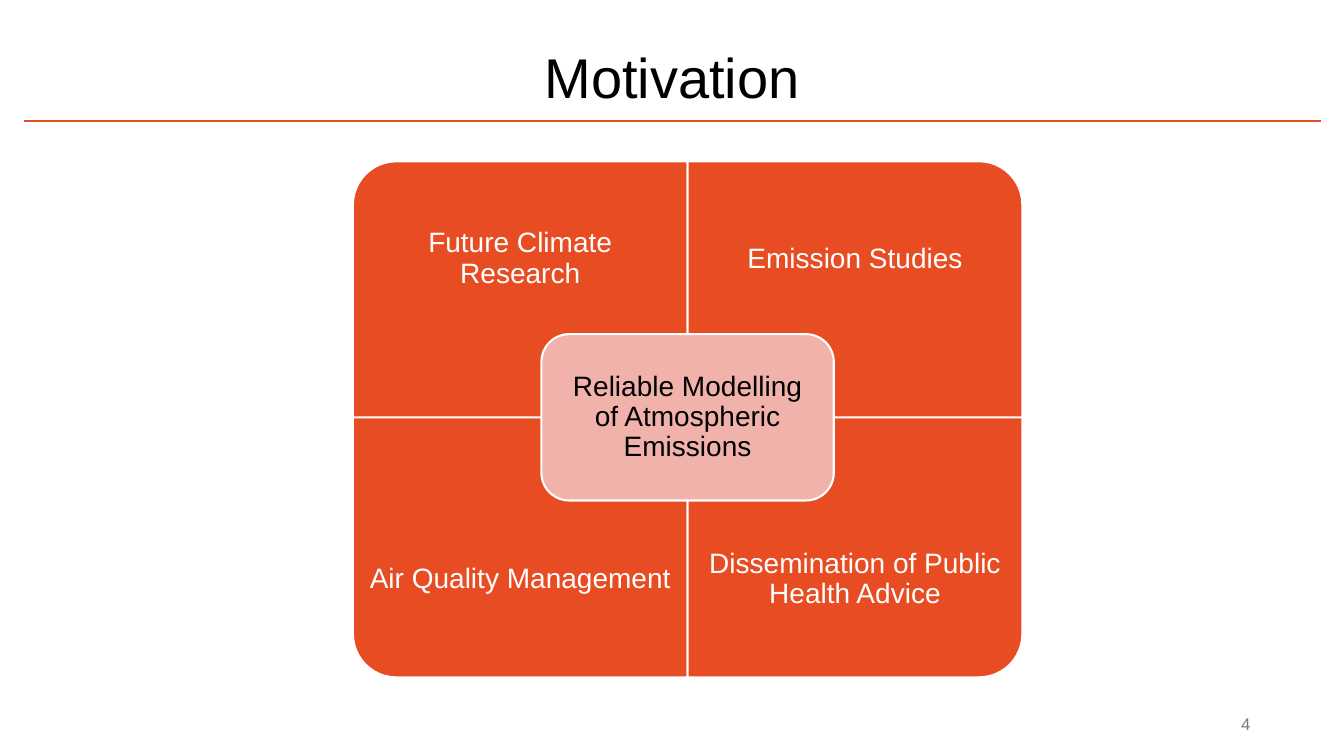
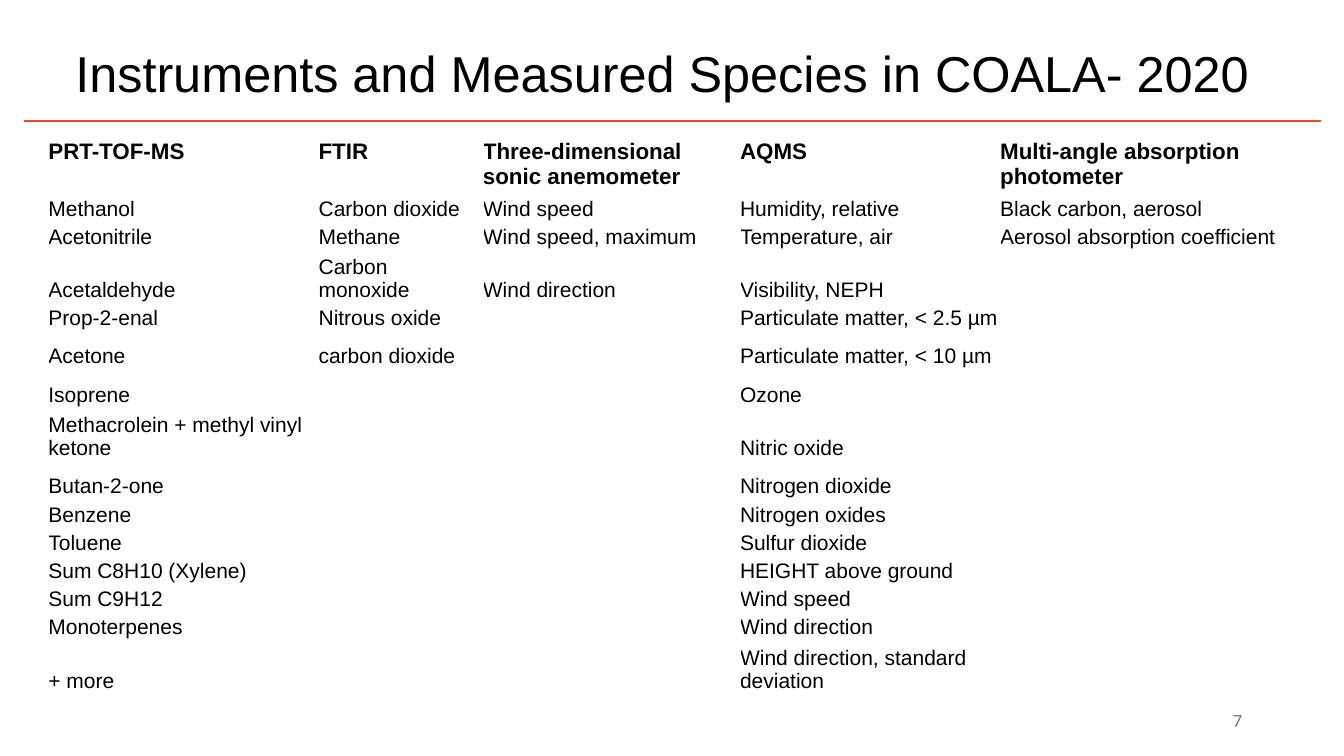
from lxml.etree import SubElement
from pptx import Presentation
from pptx.dml.color import RGBColor
from pptx.enum.shapes import MSO_CONNECTOR, MSO_SHAPE
from pptx.enum.text import MSO_ANCHOR, PP_ALIGN
from pptx.oxml.ns import qn
from pptx.util import Emu, Pt

# Shared look
ORANGE, PINK, GREY = "E84C22", "F2B2AC", "797979"
WHITE, BLACK = "FFFFFF", "000000"
FONT = "Arial"

HEADS = ["PRT-TOF-MS", "FTIR", "Three-dimensional sonic anemometer", "AQMS",
         "Multi-angle absorption photometer"]
SPECIES = [
    ["Methanol", "Acetonitrile", "Acetaldehyde", "Prop-2-enal", "Acetone",
     "Isoprene", "Methacrolein + methyl vinyl ketone", "Butan-2-one",
     "Benzene", "Toluene", "Sum C8H10 (Xylene)", "Sum C9H12",
     "Monoterpenes", "+ more"],
    ["Carbon dioxide", "Methane", "Carbon monoxide", "Nitrous oxide",
     "carbon dioxide"],
    ["Wind speed", "Wind speed, maximum", "Wind direction"],
    ["Humidity, relative", "Temperature, air", "Visibility, NEPH",
     "Particulate matter, < 2.5 µm", "Particulate matter, < 10 µm", "Ozone",
     "Nitric oxide", "Nitrogen dioxide", "Nitrogen oxides",
     "Sulfur dioxide", "HEIGHT above ground", "Wind speed",
     "Wind direction", "Wind direction, standard deviation"],
    ["Black carbon, aerosol", "Aerosol absorption coefficient"],
]
COLS = [268, 163, 255, 258, 318]
ROWS = [54, 28, 28, 28, 28, 38, 38, 53, 38, 28, 28, 28, 28, 28, 53]


def px(n):
    return Emu(int(n * 9144))


def color(code):
    return RGBColor.from_string(code)


def style(para, size, code, align=PP_ALIGN.LEFT, face=FONT, bold=False):
    para.alignment = align
    font = para.font
    font.name, font.size, font.bold = face, Pt(size), bold
    font.color.rgb = color(code)


def pad(frame, inset):
    frame.margin_left = frame.margin_right = px(inset)
    frame.margin_top = frame.margin_bottom = px(inset)


def write(slide, box, text, size, code, align, face=FONT, mid=False):
    frame = slide.shapes.add_textbox(*map(px, box)).text_frame
    frame.word_wrap = True
    frame.vertical_anchor = MSO_ANCHOR.MIDDLE if mid else MSO_ANCHOR.TOP
    para = frame.paragraphs[0]
    para.text = text
    style(para, size, code, align, face)
    return frame


def panel(slide, kind, box, fill):
    shape = slide.shapes.add_shape(kind, *map(px, box))
    shape.shadow.inherit = False
    shape.fill.solid()
    shape.fill.fore_color.rgb = color(fill)
    shape.line.color.rgb = color(WHITE)
    shape.line.width = Pt(1.5)
    return shape


def label(frame, inset):
    pad(frame, inset)
    frame.paragraphs[0].line_spacing = 0.9


def base(deck, title, size, width, number, spot, face=FONT):
    """Blank slide with title, rule and slide number."""
    slide = deck.slides.add_slide(deck.slide_layouts[6])
    write(slide, (0, 37, width, 101), title, size, BLACK, PP_ALIGN.CENTER)
    rule = slide.shapes.add_connector(
        MSO_CONNECTOR.STRAIGHT, px(24), px(120), px(1310), px(120))
    rule.line.color.rgb = color(ORANGE)
    rule.line.width = Pt(1)
    SubElement(rule._element.spPr, qn("a:effectLst"))
    write(slide, (*spot, 300, 40), number, 12, GREY, PP_ALIGN.RIGHT, face, True)
    return slide


def matrix(slide, box, names, core):
    """Four quadrants, each rounded at its outer corner, around a core."""
    left, top, width, height = box
    wide, tall, text = width // 2, 258, 194
    for i, (name, turn) in enumerate(zip(names, (270, 0, 180, 90))):
        row, col = divmod(i, 2)
        x, y = left + col * wide, top + row * (height - tall)
        # A quarter turn swaps the sides about the same centre
        w, h = (tall, wide) if turn % 180 else (wide, tall)
        spot = (x + (wide - w) / 2, y + (tall - h) / 2, w, h)
        panel(slide, MSO_SHAPE.ROUND_1_RECTANGLE, spot, ORANGE).rotation = turn
        spot = (x, y + row * (tall - text), wide, text)
        label(write(slide, spot, name, 20, WHITE, PP_ALIGN.CENTER, mid=True), 16)

    # Core
    w, h = 290, 165
    spot = (left + (width - w) / 2, top + (height - h) / 2 - 2, w, h)
    frame = panel(slide, MSO_SHAPE.ROUNDED_RECTANGLE, spot, PINK).text_frame
    frame.word_wrap = True
    frame.vertical_anchor = MSO_ANCHOR.MIDDLE
    frame.paragraphs[0].text = core
    style(frame.paragraphs[0], 20, BLACK, PP_ALIGN.CENTER)
    label(frame, 8)


def listing(slide, left, top):
    """Plain table: one column for each instrument."""
    table = slide.shapes.add_table(
        len(ROWS), len(COLS), px(left), px(top),
        px(sum(COLS)), px(sum(ROWS))).table
    table.first_row = table.horz_banding = False
    for col, width in zip(table.columns, COLS):
        col.width = px(width)
    for row, height in zip(table.rows, ROWS):
        row.height = px(height)
    for c, (head, items) in enumerate(zip(HEADS, SPECIES)):
        for r in range(len(ROWS)):
            cell = table.cell(r, c)
            cell.fill.background()
            pad(cell, 0)
            cell.margin_bottom = px(2)
            cell.vertical_anchor = MSO_ANCHOR.BOTTOM if r else MSO_ANCHOR.TOP
            para = cell.text_frame.paragraphs[0]
            style(para, 15 if r else 16, BLACK, bold=r == 0)
            if r <= len(items):
                para.text = items[r - 1] if r else head
            else:
                # Keeps empty cells from stretching their row
                SubElement(para._p, qn("a:endParaRPr"), sz="1500")


def main():
    deck = Presentation()
    deck.slide_width, deck.slide_height = px(1333), px(750)

    slide = base(deck, "Motivation", 40, 1333, "4", (950, 698))
    matrix(slide, (350, 160, 664, 512),
           ["Future Climate Research", "Emission Studies",
            "Air Quality Management", "Dissemination of Public Health Advice"],
           "Reliable Modelling of Atmospheric Emissions")

    slide = base(deck, "Instruments and Measured Species in COALA- 2020",
                 36, 1314, "7", (942, 695), "Lato")
    listing(slide, 48, 138)

    deck.save("out.pptx")


if __name__ == "__main__":
    main()
